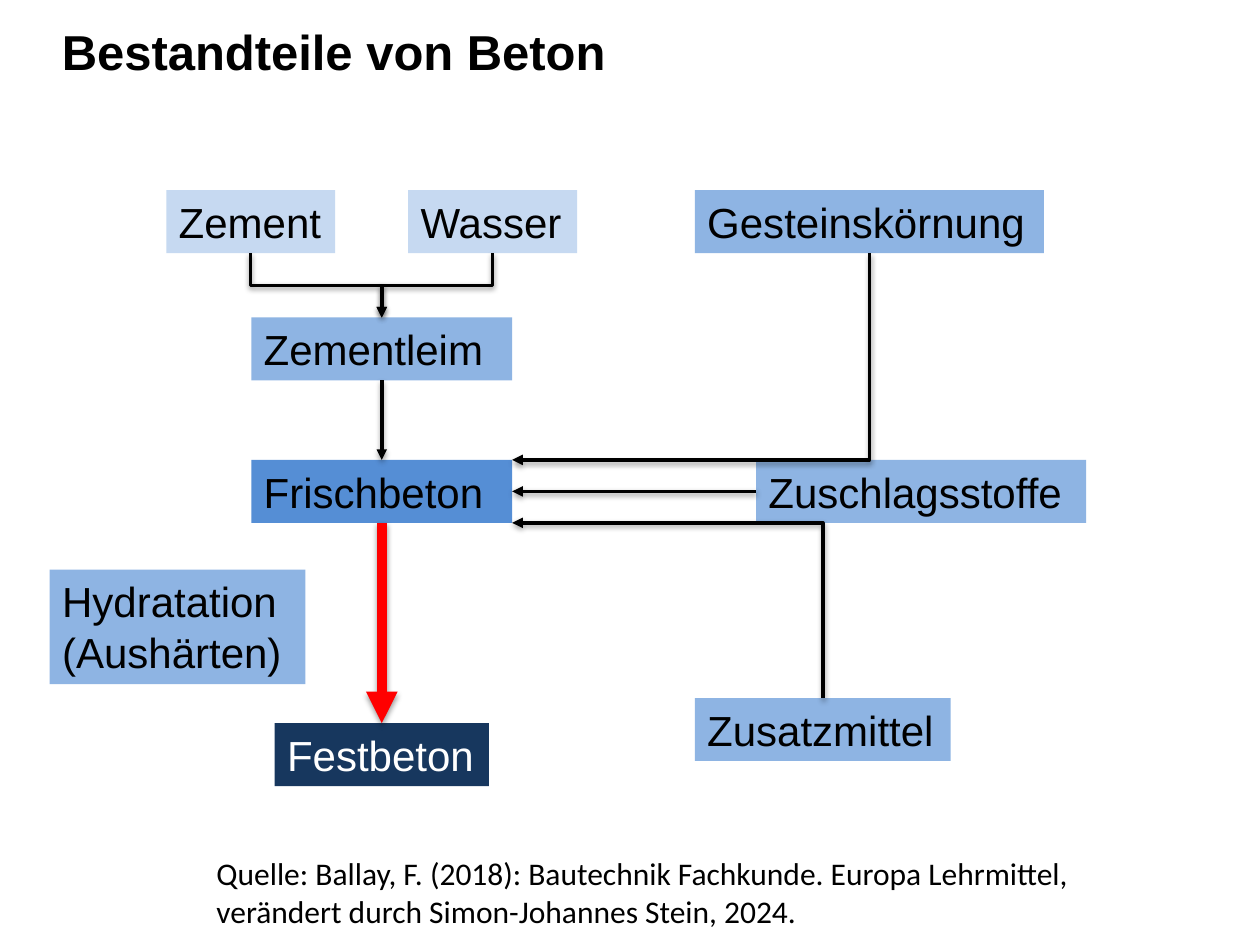
from dataclasses import dataclass

from pptx import Presentation
from pptx.dml.color import RGBColor
from pptx.enum.shapes import MSO_CONNECTOR, MSO_SHAPE
from pptx.enum.text import MSO_ANCHOR, MSO_AUTO_SIZE, PP_ALIGN
from pptx.oxml.ns import qn
from pptx.util import Inches, Pt

TOP, LEFT, BOTTOM, RIGHT = range(4)


@dataclass(frozen=True)
class Theme:
    """Colours, fonts and type sizes of the slide."""
    ink: str = "000000"
    paper: str = "FFFFFF"
    raw: str = "C6D9F1"
    component: str = "8EB4E3"
    fresh: str = "558ED5"
    hard: str = "17375E"
    reaction: str = "FF0000"
    face: str = "Arial"
    source_face: str = "Calibri"
    title_size: int = 28
    label_size: int = 24
    source_size: int = 18


@dataclass(frozen=True)
class Region:
    """A box on a grid of 100 columns by 75 rows."""
    column: float
    row: float
    columns: float
    rows: float

    def inner(self, column, row, columns, rows):
        """Return a region placed relative to this one."""
        return Region(self.column + column, self.row + row, columns, rows)

    def frame(self):
        """Return left, top, width and height as lengths."""
        return [Inches(cells / 10) for cells in
                (self.column, self.row, self.columns, self.rows)]


THEME = Theme()
NODES = {
    "Zement": (16, 0, 13.4, 5, THEME.raw, THEME.ink),
    "Wasser": (35.2, 0, 13.4, 5, THEME.raw, THEME.ink),
    "Zementleim": (26.4, 10.1, 20.7, 5, THEME.component, THEME.ink),
    "Frischbeton": (26.4, 21.4, 20.7, 5, THEME.fresh, THEME.ink),
    "Festbeton": (26.4, 42.3, 17, 5, THEME.hard, THEME.paper),
    "Zusatzmittel": (61.4, 40.3, 20.3, 5, THEME.component, THEME.ink),
    "Zuschlagsstoffe": (69.2, 21.4, 26.2, 5, THEME.component, THEME.ink),
    "Gesteinskörnung": (65.1, 0, 27.7, 5, THEME.component, THEME.ink),
    "Hydratation (Aushärten)": (10.2, 30.1, 20.3, 9.1, THEME.component, THEME.ink),
}


def write(shape, text, **font_format):
    """Fill a shape with one left-aligned, wrapped paragraph."""
    frame = shape.text_frame
    frame.text = text
    settings = dict(word_wrap=True, auto_size=MSO_AUTO_SIZE.NONE,
                    vertical_anchor=MSO_ANCHOR.TOP)
    for name, value in settings.items():
        setattr(frame, name, value)
    paragraph = frame.paragraphs[0]
    paragraph.alignment = PP_ALIGN.LEFT
    font = paragraph.runs[0].font
    font.color.rgb = RGBColor.from_string(font_format.pop("color", THEME.ink))
    for name, value in font_format.items():
        setattr(font, name, value)


def add_title(slide, region):
    """Place the slide title."""
    title = slide.shapes.title
    for name, value in zip(("left", "top", "width", "height"), region.frame()):
        setattr(title, name, value)
    write(title, "Bestandteile von Beton", name=THEME.face,
          size=Pt(THEME.title_size), bold=True)


def add_node(slide, region, label, fill, color):
    """Draw one labelled component."""
    node = slide.shapes.add_shape(MSO_SHAPE.RECTANGLE, *region.frame())
    node.shadow.inherit = False
    node.fill.solid()
    node.fill.fore_color.rgb = RGBColor.from_string(fill)
    node.line.fill.background()
    write(node, label, name=THEME.face, size=Pt(THEME.label_size), color=color)
    return node


def add_arrow(slide, kind, start, end, color=THEME.ink, weight=2):
    """Draw an arrow between two points."""
    arrow = slide.shapes.add_connector(kind, *start, *end)
    arrow.line.color.rgb = RGBColor.from_string(color)
    arrow.line.width = Pt(weight)
    outline = arrow._element.spPr.find(qn("a:ln"))
    outline.append(outline.makeelement(qn("a:tailEnd"), {"type": "triangle"}))
    return arrow


def side(node, site):
    """Return the middle of one side of a node."""
    x, y = node.left + node.width // 2, node.top + node.height // 2
    return {TOP: (x, node.top), LEFT: (node.left, y),
            BOTTOM: (x, node.top + node.height),
            RIGHT: (node.left + node.width, y)}[site]


def join(slide, source, source_site, target, target_site, **look):
    """Link two nodes with a straight arrow."""
    arrow = add_arrow(slide, MSO_CONNECTOR.STRAIGHT, side(source, source_site),
                      side(target, target_site), **look)
    arrow.begin_connect(source, source_site)
    arrow.end_connect(target, target_site)


def bend(slide, source, site, end, target=None):
    """Link a node to a point with an elbow arrow that leaves vertically."""
    start = side(source, site)
    arrow = add_arrow(slide, MSO_CONNECTOR.ELBOW, start, end)
    arrow.begin_connect(source, site)
    if target is not None:
        arrow.end_connect(target, TOP)
    across, down = end[0] - start[0], end[1] - start[1]
    arrow.width, arrow.height = abs(down), abs(across)
    arrow.left = (start[0] + end[0] - abs(down)) // 2
    arrow.top = (start[1] + end[1] - abs(across)) // 2
    properties = arrow._element.spPr
    transform = properties.find(qn("a:xfrm"))
    turned = across < 0 < down
    flips = {"rot": "5400000" if turned else "16200000",
             "flipH": str(int(across > 0)), "flipV": str(int(down < 0))}
    for name, value in flips.items():
        transform.set(name, value)
    if target is None:
        properties.find(qn("a:prstGeom")).set("prst", "bentConnector2")


def add_diagram(slide, region):
    """Draw the components of concrete and the arrows between them."""
    nodes = {}
    for label, (centre, row, columns, rows, fill, color) in NODES.items():
        place = region.inner(centre - columns / 2, row, columns, rows)
        nodes[label] = add_node(slide, place, label, fill, color)
    paste, fresh = nodes["Zementleim"], nodes["Frischbeton"]
    for label in ("Zement", "Wasser"):
        bend(slide, nodes[label], BOTTOM, side(paste, TOP), paste)
    join(slide, paste, BOTTOM, fresh, TOP)
    join(slide, fresh, BOTTOM, nodes["Festbeton"], TOP,
         color=THEME.reaction, weight=6)
    right = fresh.left + fresh.width
    bend(slide, nodes["Gesteinskörnung"], BOTTOM, (right, fresh.top))
    bend(slide, nodes["Zusatzmittel"], TOP, (right, fresh.top + fresh.height))
    join(slide, nodes["Zuschlagsstoffe"], LEFT, fresh, RIGHT)


def add_source(slide, region):
    """Place the source reference."""
    reference = slide.shapes.add_textbox(*region.frame())
    write(reference, "Quelle: Ballay, F. (2018): Bautechnik Fachkunde. Europa Lehrmittel, "
          "verändert durch Simon-Johannes Stein, 2024.",
          name=THEME.source_face, size=Pt(THEME.source_size))


def main():
    """Build the slide and save it."""
    deck = Presentation()
    deck.slide_width, deck.slide_height = Inches(10), Inches(7.5)
    slide = deck.slides.add_slide(deck.slide_layouts.get_by_name("Title Only"))
    add_title(slide, Region(3.9, 1.2, 96.1, 10))
    add_diagram(slide, Region(3.9, 15.1, 82.3, 47.3))
    add_source(slide, Region(16.2, 67.3, 77.7, 7.1))
    deck.save("out.pptx")


if __name__ == "__main__":
    main()
